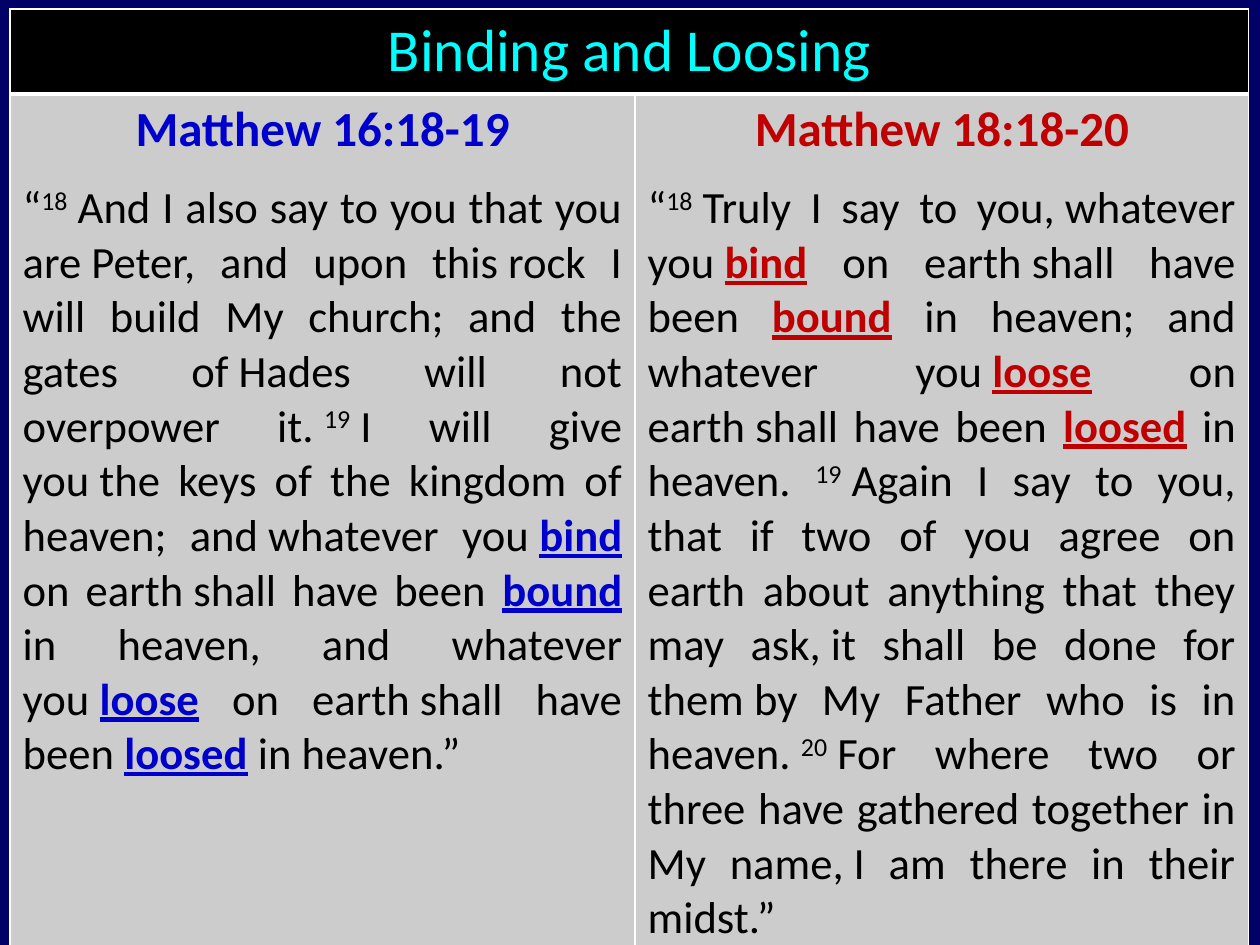
from pptx import Presentation
from pptx.dml.color import RGBColor
from pptx.enum.text import PP_ALIGN as Align
from pptx.oxml import parse_xml
from pptx.oxml.ns import nsdecls
from pptx.util import Inches, Pt

COLORS = {
    "background": "000066", "header": "000000", "title": "00FFFF",
    "panel": "CCCCCC", "text": "000000", "border": "FFFFFF",
    "blue": "0000CC", "red": "C00000",
}

# Between bars: verse numbers (raised) and key words (bold, underlined).
# A tilde stands for a no-break space.
PASSAGES = [
    ("Matthew 16:18-19", "blue",
     "“|18|~And I also say to you that you are~Peter, and upon this~rock I will "
     "build My church; and the gates of~Hades will not overpower it.~|19|~I will "
     "give you~the keys of the kingdom of heaven; and~whatever you~|bind| on "
     "earth~shall have been |bound| in heaven, and whatever you~|loose| on "
     "earth~shall have been |loosed| in heaven.”"),
    ("Matthew 18:18-20", "red",
     "“|18|~Truly I say to you,~whatever you~|bind| on earth~shall have been "
     "|bound| in heaven; and whatever you~|loose| on earth~shall have been "
     "|loosed| in heaven. |19|~Again I say to you, that if two of you agree on "
     "earth about anything that they may ask,~it shall be done for them~by My "
     "Father who is in heaven.~|20|~For where two or three have gathered together "
     "in My name,~I am there in their midst.”"),
]


class SlideBuilder:
    font_name = "Calibri"
    body_size = 25.5

    def __init__(self, presentation):
        self.slide = presentation.slides.add_slide(presentation.slide_layouts[6])

    def color(self, name):
        return RGBColor.from_string(COLORS[name])

    def background(self, name):
        fill = self.slide.background.fill
        fill.solid()
        fill.fore_color.rgb = self.color(name)

    def table(self, left, top, height, widths, heights):
        frame = self.slide.shapes.add_table(
            len(heights), len(widths), Inches(left), Inches(top),
            Inches(sum(widths)), Inches(height))
        table = frame.table
        for column, width in zip(table.columns, widths):
            column.width = Inches(width)
        for row, row_height in zip(table.rows, heights):
            row.height = Inches(row_height)
        frame.height = Inches(height)
        return table

    def cell(self, cell, fill, **borders):
        properties = cell._tc.get_or_add_tcPr()
        for side in "LRTB":
            properties.append(parse_xml(
                f'<a:ln{side} {nsdecls("a")} w="{Pt(borders.get(side, 1))}">'
                f'<a:solidFill><a:srgbClr val="{COLORS["border"]}"/></a:solidFill>'
                f'</a:ln{side}>'))
        cell.fill.solid()
        cell.fill.fore_color.rgb = self.color(fill)

    def run(self, paragraph, text, size, color, raised=False, **style):
        run = paragraph.add_run()
        run.text = text.replace("~", chr(160))
        values = {"name": self.font_name, "size": Pt(size), "bold": False}
        for name, value in (values | style).items():
            setattr(run.font, name, value)
        run.font.color.rgb = self.color(color)
        if raised:
            run._r.get_or_add_rPr().set("baseline", "30000")

    def heading(self, cell, text, size, color, space_after=0, bold=False):
        paragraph = cell.text_frame.paragraphs[0]
        paragraph.alignment = Align.CENTER
        paragraph.space_after = Pt(space_after)
        self.run(paragraph, text, size, color, bold=bold)

    def passage(self, cell, text, accent):
        paragraph = cell.text_frame.add_paragraph()
        paragraph.alignment = Align.JUSTIFY
        for index, part in enumerate(text.split("|")):
            if index % 2 and not part.isdigit():
                self.run(paragraph, part, self.body_size, accent,
                         bold=True, underline=True)
            else:
                self.run(paragraph, part, self.body_size, "text",
                         raised=part.isdigit())


def main():
    presentation = Presentation()
    presentation.slide_width = Inches(10)
    presentation.slide_height = Inches(7.5)
    builder = SlideBuilder(presentation)
    builder.background("background")
    table = builder.table(0.08, 0.07, 7.35, [4.96, 4.87], [0.6, 0.41])

    # Header across both columns
    header = table.cell(0, 0)
    header.merge(table.cell(0, 1))
    for column in range(2):
        builder.cell(table.cell(0, column), "header", B=3)
    builder.heading(header, "Binding and Loosing", 34, "title")

    # One passage per column
    for column, (reference, accent, text) in enumerate(PASSAGES):
        cell = table.cell(1, column)
        builder.cell(cell, "panel", T=3)
        builder.heading(cell, reference, 28, accent, space_after=12, bold=True)
        builder.passage(cell, text, accent)

    presentation.save("out.pptx")


if __name__ == "__main__":
    main()
